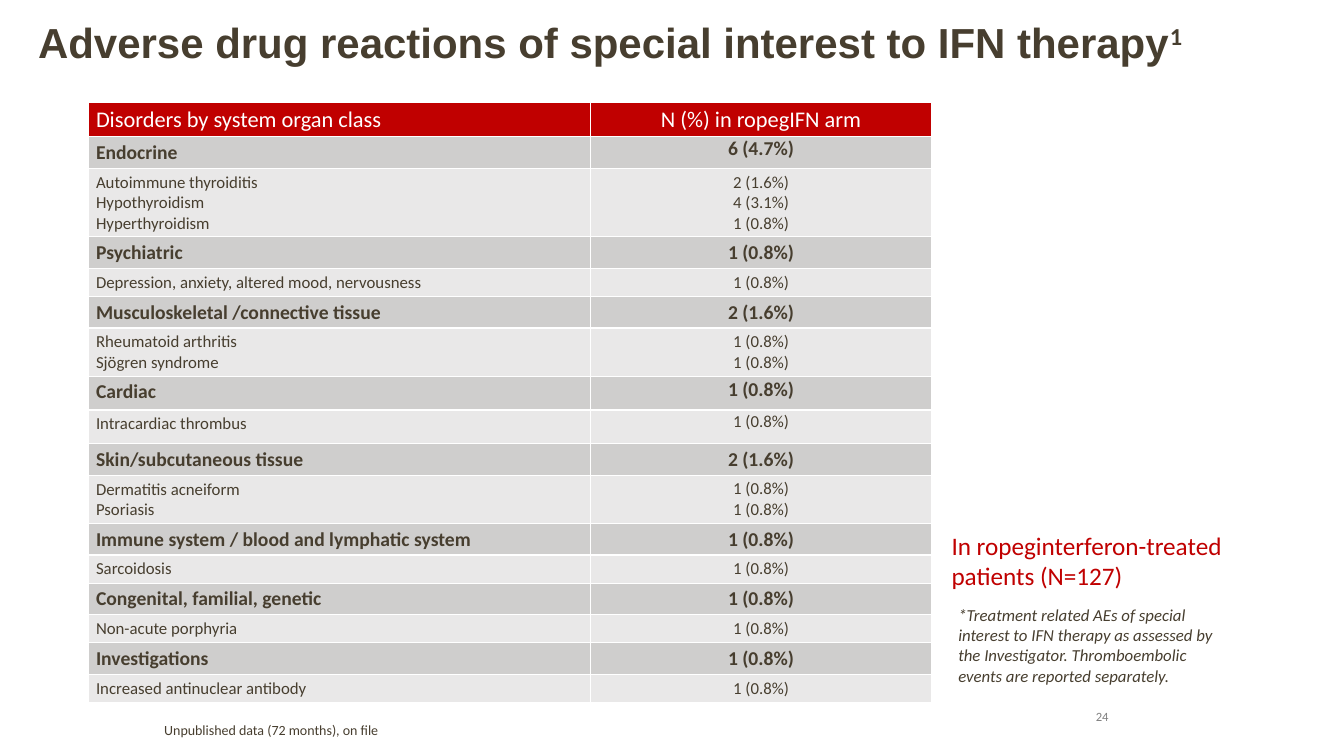
from pptx import Presentation
from pptx.dml.color import RGBColor
from pptx.enum.text import MSO_ANCHOR as Anchor, PP_ALIGN as Align
from pptx.util import Cm, Pt

BROWN, RED, WHITE, GREY = "473E2F", "C00000", "FFFFFF", "7F7F7F"
HEADING_FILL, DETAIL_FILL = "CFCECD", "E9E8E8"
TOP, MIDDLE = Anchor.TOP, Anchor.MIDDLE
# Horizontal and vertical cell margins in cm
WIDE, MEDIUM, TIGHT = (0.18, 0.1), (0.1, 0.05), (0.03, 0)


def color(hex_text):
    return RGBColor.from_string(hex_text)


def write(frame, text, size, tint, align=Align.LEFT, anchor=TOP,
          margins=(0.25, 0.13), font="Calibri", bold=False, italic=False):
    frame.text = text
    frame.vertical_anchor = anchor
    frame.margin_left = frame.margin_right = Cm(margins[0])
    frame.margin_top = frame.margin_bottom = Cm(margins[1])
    for para in frame.paragraphs:
        para.alignment = align
        for span in para.runs:
            span.font.name = font
            span.font.size = Pt(size)
            span.font.bold = bold
            span.font.italic = italic
            span.font.color.rgb = color(tint)


deck = Presentation()
deck.slide_width, deck.slide_height = Cm(33.87), Cm(19.05)
page = deck.slides.add_slide(deck.slide_layouts[6])

# Title with superscript reference
title = page.shapes.add_textbox(Cm(0.71), Cm(0.58), Cm(30.4), Cm(0.94)).text_frame
title.word_wrap = True
write(title, "Adverse drug reactions of special interest to IFN therapy", 30, BROWN,
      anchor=MIDDLE, font="Arial", bold=True)
reference = title.paragraphs[0].add_run()
reference.text = "1"
reference.font.size = Pt(30)
reference.font.bold = True
reference.font.color.rgb = color(BROWN)
reference.font._element.set("baseline", "30000")

# Organ class, total, reactions with counts, anchor, margins of total and of counts
groups = [
    ("Endocrine", "6 (4.7%)",
     [("Autoimmune thyroiditis", "2 (1.6%)"), ("Hypothyroidism", "4 (3.1%)"),
      ("Hyperthyroidism", "1 (0.8%)")], TOP, TIGHT, WIDE),
    ("Psychiatric", "1 (0.8%)",
     [("Depression, anxiety, altered mood, nervousness", "1 (0.8%)")], TOP, WIDE, WIDE),
    ("Musculoskeletal /connective tissue", "2 (1.6%)",
     [("Rheumatoid arthritis", "1 (0.8%)"), ("Sjögren syndrome", "1 (0.8%)")],
     TOP, WIDE, WIDE),
    ("Cardiac", "1 (0.8%)",
     [("Intracardiac thrombus", "1 (0.8%)")], TOP, MEDIUM, MEDIUM),
    ("Skin/subcutaneous tissue", "2 (1.6%)",
     [("Dermatitis acneiform", "1 (0.8%)"), ("Psoriasis", "1 (0.8%)")],
     MIDDLE, WIDE, TIGHT),
    ("Immune system / blood and lymphatic system", "1 (0.8%)",
     [("Sarcoidosis", "1 (0.8%)")], MIDDLE, TIGHT, TIGHT),
    ("Congenital, familial, genetic", "1 (0.8%)",
     [("Non-acute porphyria", "1 (0.8%)")], MIDDLE, TIGHT, TIGHT),
    ("Investigations", "1 (0.8%)",
     [("Increased antinuclear antibody", "1 (0.8%)")], MIDDLE, TIGHT, TIGHT),
]

# Table rows: texts, height, size, text colour, fill, bold, anchor, count margins
rows = [(("Disorders by system organ class", "N (%) in ropegIFN arm"),
         0.86, 16, WHITE, RED, False, MIDDLE, WIDE)]
for organ, total, reactions, anchor, total_margins, count_margins in groups:
    names, counts = ("\n".join(column) for column in zip(*reactions))
    cardiac = organ == "Cardiac"
    heading_height = 0.85 if cardiac else 0.79
    detail_height = 0.85 if cardiac else 0.69 + 0.51 * (len(reactions) - 1)
    rows.append(((organ, total), heading_height, 14, BROWN, HEADING_FILL, True,
                 anchor, total_margins))
    rows.append(((names, counts), detail_height, 12, BROWN, DETAIL_FILL, False,
                 anchor, count_margins))

# Table of reactions
table = page.shapes.add_table(len(rows), 2, Cm(2.24), Cm(2.57), Cm(21.23), Cm(14.96)).table
table.columns[0].width, table.columns[1].width = Cm(12.65), Cm(8.58)
for index, (texts, height, size, tint, fill, bold, anchor, margins) in enumerate(rows):
    table.rows[index].height = Cm(height)
    for column, (text, align, pad) in enumerate(
            zip(texts, (Align.LEFT, Align.CENTER), (WIDE, margins))):
        cell = table.cell(index, column)
        cell.fill.solid()
        cell.fill.fore_color.rgb = color(fill)
        write(cell.text_frame, text, size, tint, align, bold=bold)
        cell.vertical_anchor = anchor
        cell.margin_left = cell.margin_right = Cm(pad[0])
        cell.margin_top = cell.margin_bottom = Cm(pad[1])

# Side notes, source and page number
notes = [
    ((23.9, 15.11, 7.21, 2.82),
     "*Treatment related AEs of special interest to IFN therapy as assessed by the "
     "Investigator. Thromboembolic events are reported separately.",
     12, BROWN, {"italic": True}),
    ((23.9, 13.28, 7.65, 1.68), "In ropeginterferon-treated patients (N=127)",
     18, RED, {"anchor": MIDDLE, "margins": (0.08, 0.08)}),
    ((3.89, 18.06, 6.38, 0.69), "Unpublished data (72 months), on file", 10, BROWN, {}),
    ((27.61, 17.86, 0.33, 0.38), "24", 9, GREY,
     {"align": Align.RIGHT, "anchor": MIDDLE, "margins": (0, 0)}),
]
for place, text, size, tint, options in notes:
    box = page.shapes.add_textbox(*map(Cm, place))
    box.text_frame.word_wrap = text != "24"
    write(box.text_frame, text, size, tint, **options)

deck.save("out.pptx")
